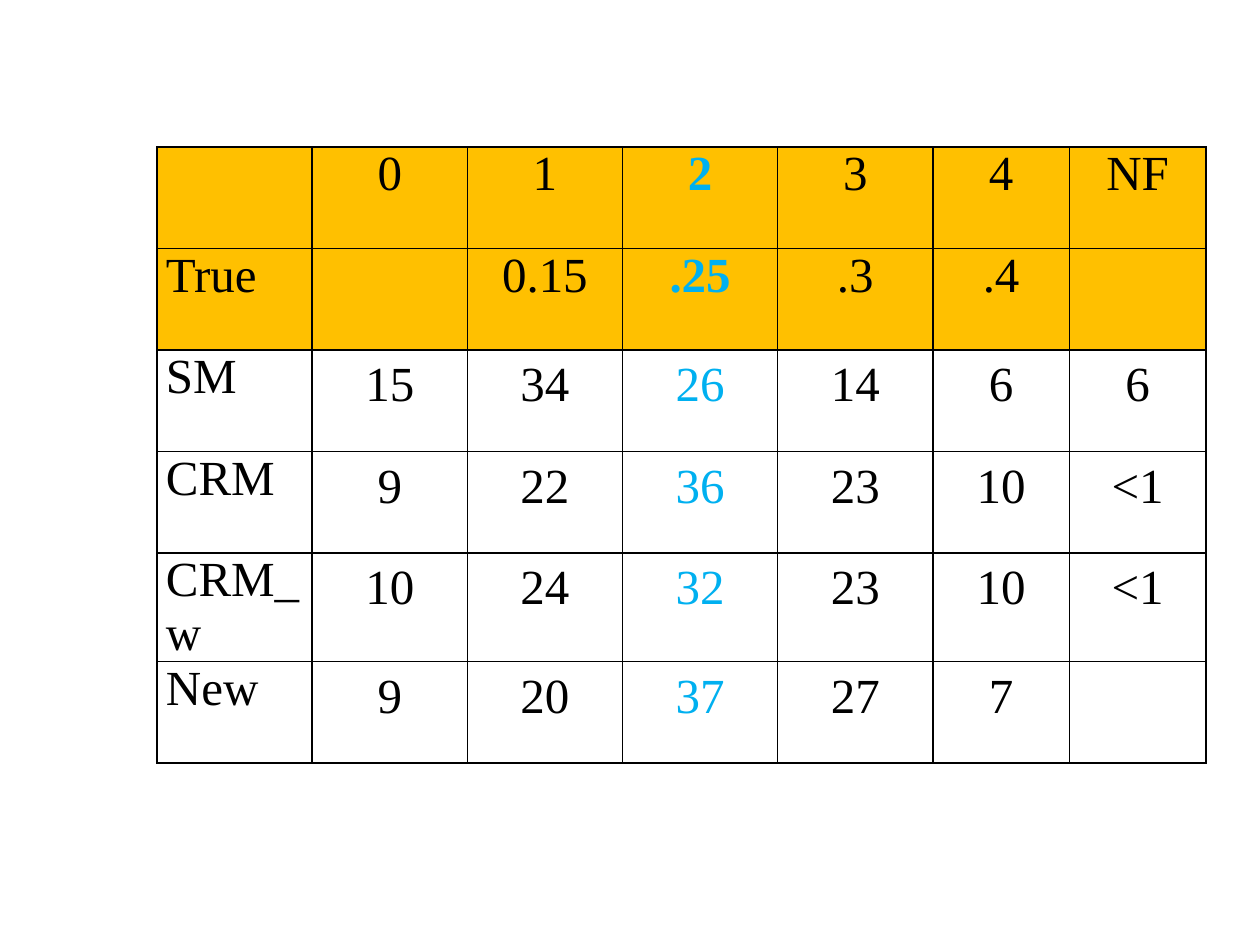
from lxml import etree
from pptx import Presentation
from pptx.dml.color import RGBColor
from pptx.enum import text
from pptx.oxml.ns import qn
from pptx.util import Pt

PX = 914400 / 126
BLACK = RGBColor(0x00, 0x00, 0x00)
GOLD = RGBColor(0xFF, 0xC0, 0x00)
BLUE = RGBColor(0x00, 0xB0, 0xF0)

ROWS = [
    ["", "0", "1", "2", "3", "4", "NF"],
    ["True", "", "0.15", ".25", ".3", ".4", ""],
    ["SM", "15", "34", "26", "14", "6", "6"],
    ["CRM", "9", "22", "36", "23", "10", "<1"],
    ["CRM_w", "10", "24", "32", "23", "10", "<1"],
    ["New", "9", "20", "37", "27", "7", ""],
]
HEADS = 2     # gold rows at the top
TARGET = 3    # column of the true dose
LEFT, TOP, HEIGHT = 157, 147, 609
WIDE, NARROW = 776, 273    # first five columns, last two columns
PAD = 9


def px(n):
    return round(n * PX)


def border(cell):
    props = cell._tc.get_or_add_tcPr()
    for i, side in enumerate(("lnL", "lnR", "lnT", "lnB")):
        line = etree.Element(qn("a:" + side), w=str(Pt(1)))
        fill = etree.SubElement(line, qn("a:solidFill"))
        etree.SubElement(fill, qn("a:srgbClr"), val=str(BLACK))
        props.insert(i, line)


def style(cell, row, col):
    head, target = row < HEADS, col == TARGET
    if head:
        cell.fill.solid()
        cell.fill.fore_color.rgb = GOLD
    else:
        cell.fill.background()
    border(cell)
    cell.margin_left = cell.margin_right = px(PAD)
    cell.margin_top = cell.margin_bottom = 0
    para = cell.text_frame.paragraphs[0]
    if col:
        para.alignment = text.PP_ALIGN.CENTER
        if not head:
            para.line_spacing = 1.15
    font = para.font
    font.name, font.size = "Times New Roman", Pt(28)
    font.bold = head and target
    font.color.rgb = BLUE if target else BLACK


def main():
    deck = Presentation()
    deck.slide_width, deck.slide_height = px(1260), px(945)
    slide = deck.slides.add_slide(deck.slide_layouts[6])
    table = slide.shapes.add_table(
        len(ROWS), len(ROWS[0]), px(LEFT), px(TOP),
        px(WIDE + NARROW), px(HEIGHT)).table
    table.first_row = table.horz_banding = False
    for i, column in enumerate(table.columns):
        column.width = px(WIDE / 5 if i < 5 else NARROW / 2)
    for r, values in enumerate(ROWS):
        table.rows[r].height = px(HEIGHT / len(ROWS))
        for c, value in enumerate(values):
            cell = table.cell(r, c)
            cell.text = value
            style(cell, r, c)
    deck.save("out.pptx")


if __name__ == "__main__":
    main()
